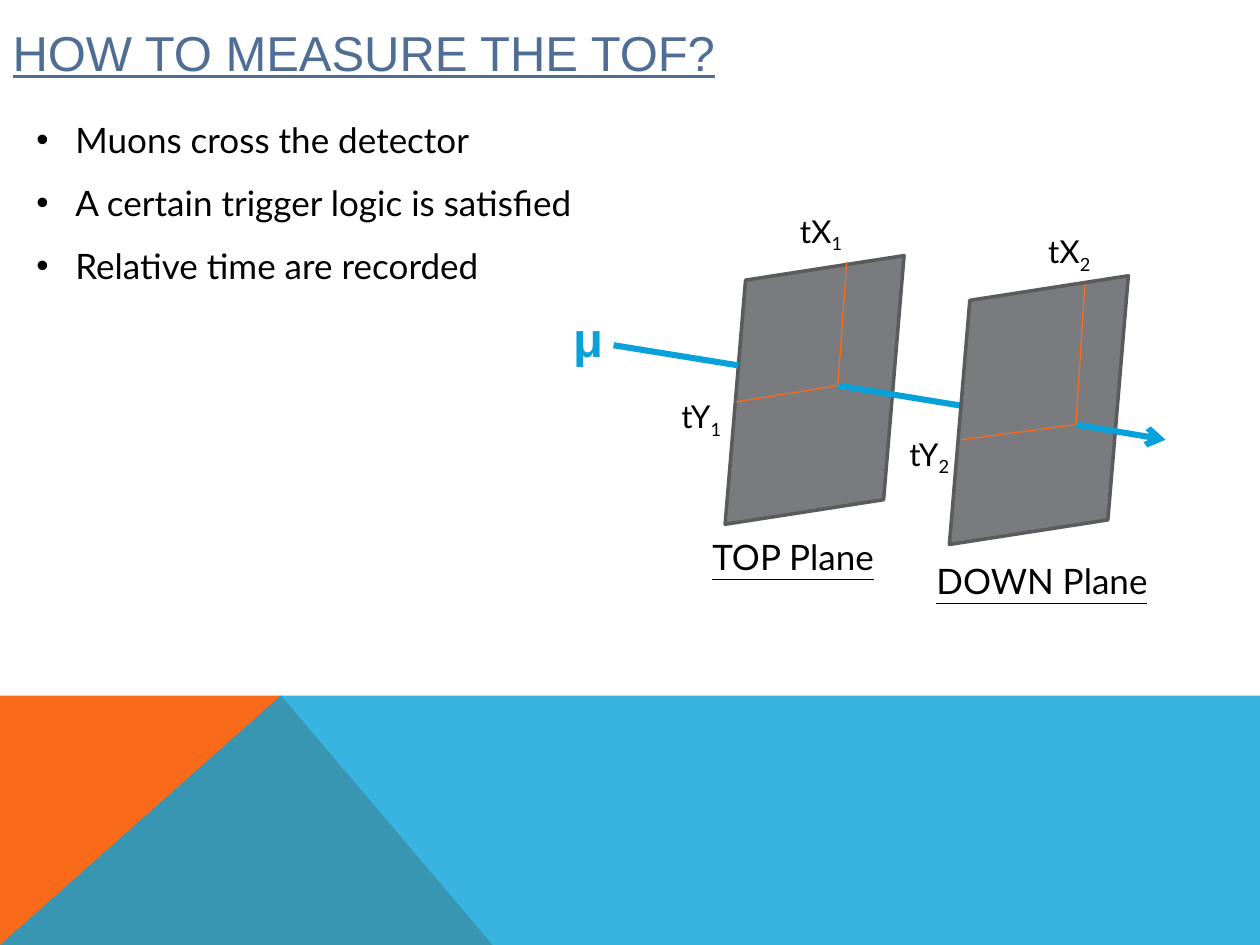
from lxml.etree import SubElement
from pptx import Presentation
from pptx.dml.color import RGBColor
from pptx.enum.shapes import MSO_CONNECTOR, MSO_SHAPE
from pptx.enum.text import MSO_ANCHOR, MSO_AUTO_SIZE, PP_ALIGN
from pptx.oxml.ns import qn
from pptx.util import Inches, Pt

HUES = {"orange": "F96A1B", "blue": "08A1D9", "title": "506E94",
        "plane": "797B7E", "edge": "5A5B5D", "black": "000000"}

TITLE = "HOW TO MEASURE THE TOF?"
STEPS = ["Muons cross the detector",
         "A certain trigger logic is satisfied",
         "Relative time are recorded"]
# Footer shapes: points, colour, opacity in percent
BANDS = [
    ([(0, 7.5), (0, 5.52), (2.23, 5.52), (3.91, 7.5)], "orange", 100),
    ([(0, 7.5), (2.23, 5.52), (10, 5.52), (10, 7.5)], "blue", 80),
]
# Each plane: corner, muon hit, outgoing beam end, hit marks on left and top edge
PLANES = [
    {"at": (5.6, 2.15), "hit": (6.65, 3.06), "out": (7.63, 3.22),
     "marks": [(5.84, 3.19), (6.72, 2.08)]},
    {"at": (7.38, 2.31), "hit": (8.54, 3.37), "out": (9.25, 3.49),
     "marks": [(7.63, 3.49), (8.61, 2.26)]},
]
BEAM_IN = (4.87, 2.74), (5.86, 2.9)
# Time labels: name, subscript, corner
TIMES = [("tX", "1", (6.25, 1.63)), ("tY", "1", (5.31, 3.1)),
         ("tX", "2", (8.22, 1.79)), ("tY", "2", (7.12, 3.4))]
NAMES = [("TOP Plane", (5.47, 4.24, 1.65, 0.66)),
         ("DOWN Plane", (7.29, 4.43, 1.96, 0.66))]

deck = Presentation()
deck.slide_width, deck.slide_height = Inches(10), Inches(7.5)
slide = deck.slides.add_slide(deck.slide_layouts[5])
shapes = slide.shapes


def hue(name):
    return RGBColor.from_string(HUES[name])


def style(run, size, font="Lato", color="black", bold=False, line=False):
    run.font.size, run.font.name = Pt(size), font
    run.font.color.rgb = hue(color)
    run.font.bold, run.font.underline = bold, line


def add_text(box, wrap=True):
    frame = shapes.add_textbox(*map(Inches, box)).text_frame
    frame.word_wrap = wrap
    return frame


def add_line(start, end, color, width, arrow=False):
    line = shapes.add_connector(MSO_CONNECTOR.STRAIGHT, *map(Inches, start + end))
    line.line.color.rgb, line.line.width = hue(color), Pt(width)
    props = line._element.spPr
    if arrow:
        SubElement(props.find(qn("a:ln")), qn("a:tailEnd"), type="arrow")
    SubElement(props, qn("a:effectLst"))


def add_plane(at):
    plane = shapes.add_shape(MSO_SHAPE.PARALLELOGRAM, *map(Inches, at + (1.73, 1.89)))
    plane.adjustments[0] = 0.264
    plane.rotation = 351.2
    plane.shadow.inherit = False
    plane.fill.solid()
    plane.fill.fore_color.rgb = hue("plane")
    plane.line.color.rgb, plane.line.width = hue("edge"), Pt(2)


# Footer
for points, color, opacity in BANDS:
    first, *rest = [tuple(map(Inches, point)) for point in points]
    path = shapes.build_freeform(*first)
    path.add_line_segments(rest, close=True)
    band = path.convert_to_shape()
    band.shadow.inherit = False
    band.line.fill.background()
    band.fill.solid()
    band.fill.fore_color.rgb = hue(color)
    if opacity < 100:
        tone = band._element.spPr.find(qn("a:solidFill"))[0]
        SubElement(tone, qn("a:alpha"), val=str(opacity * 1000))

# Title
title = shapes.title
title.left, title.top, title.width, title.height = map(Inches, (0, 0.1, 10, 0.62))
frame = title.text_frame
frame.text = TITLE
frame.auto_size = MSO_AUTO_SIZE.NONE
frame.vertical_anchor = MSO_ANCHOR.MIDDLE
frame.paragraphs[0].alignment = PP_ALIGN.LEFT
style(frame.paragraphs[0].runs[0], 28, "Arial", "title", line=True)

# Planes with the muon's track
for plane in PLANES:
    add_plane(plane["at"])
    add_line(plane["hit"], plane["out"], "blue", 3.5, arrow=plane is PLANES[-1])
    for mark in plane["marks"]:
        add_line(plane["hit"], mark, "orange", 0.75)
add_line(*BEAM_IN, "blue", 3.5)

# Muon symbol
frame = add_text((4.45, 2.4, 0.43, 0.57))
frame.text = "μ"
style(frame.paragraphs[0].runs[0], 28, "Arial", "blue", bold=True)

# Time labels with subscripts, in boxes wide enough for one line
for name, index, at in TIMES:
    para = add_text(at + (0.6, 0.43), wrap=False).paragraphs[0]
    for text in (name, index):
        run = para.add_run()
        run.text = text
        style(run, 18)
    run.font._element.set("baseline", "-25000")

# Steps
frame = add_text((0.19, 0.89, 4.65, 1.45))
frame.text = "\n".join(STEPS)
for para in frame.paragraphs:
    para.space_before = Pt(12)
    props = para._p.get_or_add_pPr()
    props.set("marL", str(Inches(0.31)))
    props.set("indent", str(-Inches(0.31)))
    SubElement(props, qn("a:buFont"), typeface="Arial")
    SubElement(props, qn("a:buChar"), char="•")
    style(para.runs[0], 20)

# Plane names
for name, box in NAMES:
    frame = add_text(box)
    frame.margin_top = Inches(0.01)
    frame.text = name
    para = frame.paragraphs[0]
    para.alignment, para.space_before = PP_ALIGN.CENTER, Pt(8)
    style(para.runs[0], 20, line=True)

deck.save("out.pptx")
